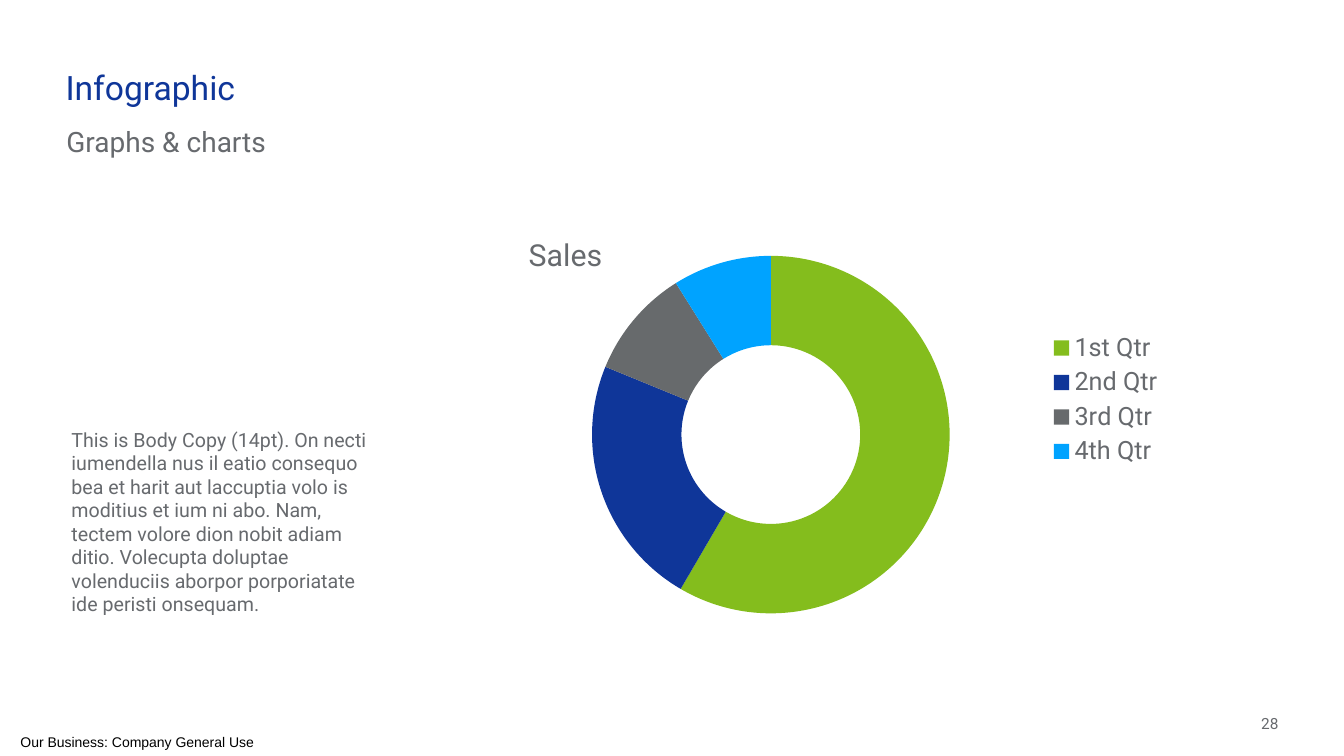
from lxml.etree import SubElement
from pptx import Presentation
from pptx.chart.data import CategoryChartData
from pptx.dml.color import RGBColor
from pptx.enum.chart import XL_CHART_TYPE, XL_LEGEND_POSITION
from pptx.enum.text import MSO_ANCHOR, PP_ALIGN
from pptx.oxml.ns import qn
from pptx.util import Inches, Pt

BLUE = RGBColor(0x0F, 0x36, 0x99)
GREY = RGBColor(0x67, 0x6A, 0x6E)
BLACK = RGBColor(0x00, 0x00, 0x00)
GREEN = RGBColor(0x84, 0xBD, 0x1D)
SLATE = RGBColor(0x67, 0x6A, 0x6C)
SKY = RGBColor(0x00, 0xA3, 0xFF)

WIDTH, HEIGHT = Inches(13.33), Inches(7.5)
QUARTERS = {
    "1st Qtr": (59, GREEN),
    "2nd Qtr": (23, BLUE),
    "3rd Qtr": (10, SLATE),
    "4th Qtr": (9, SKY),
}
BODY = (
    "This is Body Copy (14pt). On necti iumendella nus il eatio consequo "
    "bea et harit aut laccuptia volo is moditius et ium ni abo. Nam, tectem "
    "volore dion nobit adiam ditio. Volecupta doluptae volenduciis aborpor "
    "porporiatate ide peristi onsequam."
)


def percent_area(left, top, width, height):
    return (
        int(WIDTH * left / 100),
        int(HEIGHT * top / 100),
        int(WIDTH * width / 100),
        int(HEIGHT * height / 100),
    )


def set_font(font, size, color=GREY, name="Roboto"):
    values = {"size": Pt(size), "name": name, "bold": False}
    for attribute, value in values.items():
        setattr(font, attribute, value)
    font.color.rgb = color


def add_text(page, area, text, size, color=GREY, name="Roboto",
             align=PP_ALIGN.LEFT, side=0.1, top=0.05, anchor=MSO_ANCHOR.TOP):
    frame = page.shapes.add_textbox(*percent_area(*area)).text_frame
    values = {
        "word_wrap": True,
        "vertical_anchor": anchor,
        "margin_left": Inches(side),
        "margin_right": Inches(side),
        "margin_top": Inches(top),
    }
    for attribute, value in values.items():
        setattr(frame, attribute, value)
    para = frame.paragraphs[0]
    para.alignment = align
    span = para.add_run()
    span.text = text
    set_font(span.font, size, color, name)
    return frame


def place_part(part, **shares):
    for former in part.findall(qn("c:layout")):
        part.remove(former)
    layout = SubElement(part, qn("c:layout"))
    manual = SubElement(layout, qn("c:manualLayout"))
    if "w" in shares:
        SubElement(manual, qn("c:layoutTarget")).set("val", "inner")
    for axis in ("x", "y"):
        SubElement(manual, qn(f"c:{axis}Mode")).set("val", "edge")
    for key, share in shares.items():
        SubElement(manual, qn(f"c:{key}")).set("val", str(share))
    overlay = part.find(qn("c:overlay"))
    if overlay is None:
        part.insert(0, layout)
    else:
        overlay.addprevious(layout)


def add_doughnut(page, area, title):
    data = CategoryChartData()
    data.categories = list(QUARTERS)
    data.add_series(title, [value for value, color in QUARTERS.values()])
    chart = page.shapes.add_chart(
        XL_CHART_TYPE.DOUGHNUT, *percent_area(*area), data
    ).chart
    set_font(chart.font, 18)

    chart.has_title = True
    heading = chart.chart_title.text_frame
    heading.text = title
    set_font(heading.paragraphs[0].runs[0].font, 21.6)

    chart.has_legend = True
    chart.legend.position = XL_LEGEND_POSITION.RIGHT
    chart.legend.include_in_layout = False
    set_font(chart.legend.font, 18)

    plot = chart.plots[0]
    plot.vary_by_categories = True
    for index, (value, color) in enumerate(QUARTERS.values()):
        fill = plot.series[0].points[index].format.fill
        fill.solid()
        fill.fore_color.rgb = color

    root = chart.element
    place_part(next(root.iter(qn("c:title"))), x=0.04, y=0.12)
    place_part(next(root.iter(qn("c:legend"))), x=0.81, y=0.34)
    place_part(next(root.iter(qn("c:plotArea"))), x=0.14, y=0.18, w=0.53, h=0.79)


def main():
    deck = Presentation()
    deck.slide_width, deck.slide_height = WIDTH, HEIGHT
    page = deck.slides.add_slide(deck.slide_layouts[6])

    add_text(page, (92.2, 94, 2.93, 3.33), "28", 11, align=PP_ALIGN.RIGHT,
             side=0, anchor=MSO_ANCHOR.MIDDLE)
    footer = add_text(page, (0, 96.4, 20.4, 3.6),
                      "Our Business: Company General Use", 10, BLACK, "Arial",
                      PP_ALIGN.CENTER, 0, 0, MSO_ANCHOR.MIDDLE)
    footer.margin_bottom = 0
    add_text(page, (4.88, 8.13, 37.13, 7.6), "Infographic", 24, BLUE, side=0)
    add_text(page, (4.2, 15.87, 37.13, 7.6), "Graphs & charts", 20)
    add_doughnut(page, (36.91, 23.07, 50.49, 59.87), "Sales")
    add_text(page, (4.58, 53.87, 23.71, 43.47), BODY, 14, top=0.2)

    deck.save("out.pptx")


if __name__ == "__main__":
    main()
